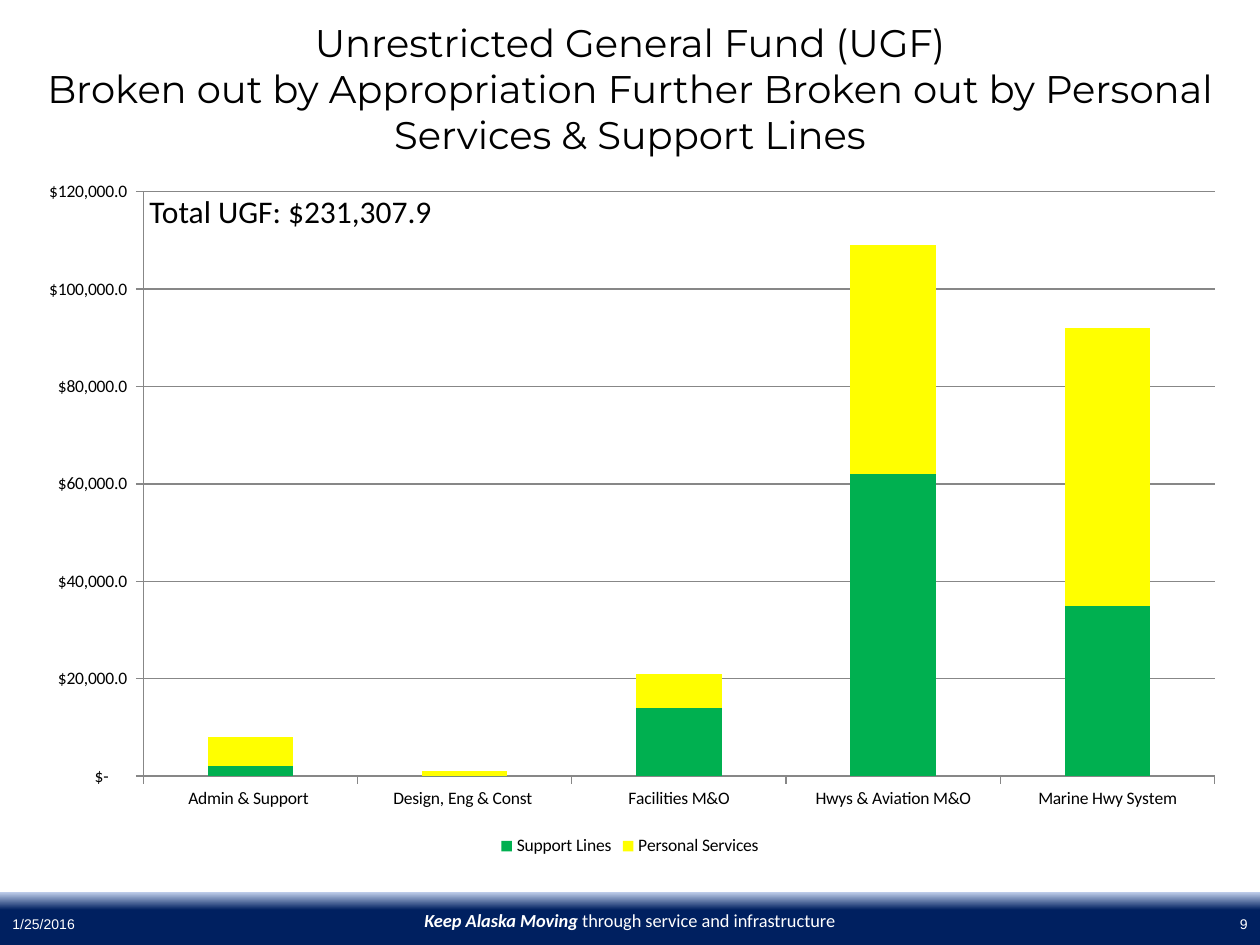
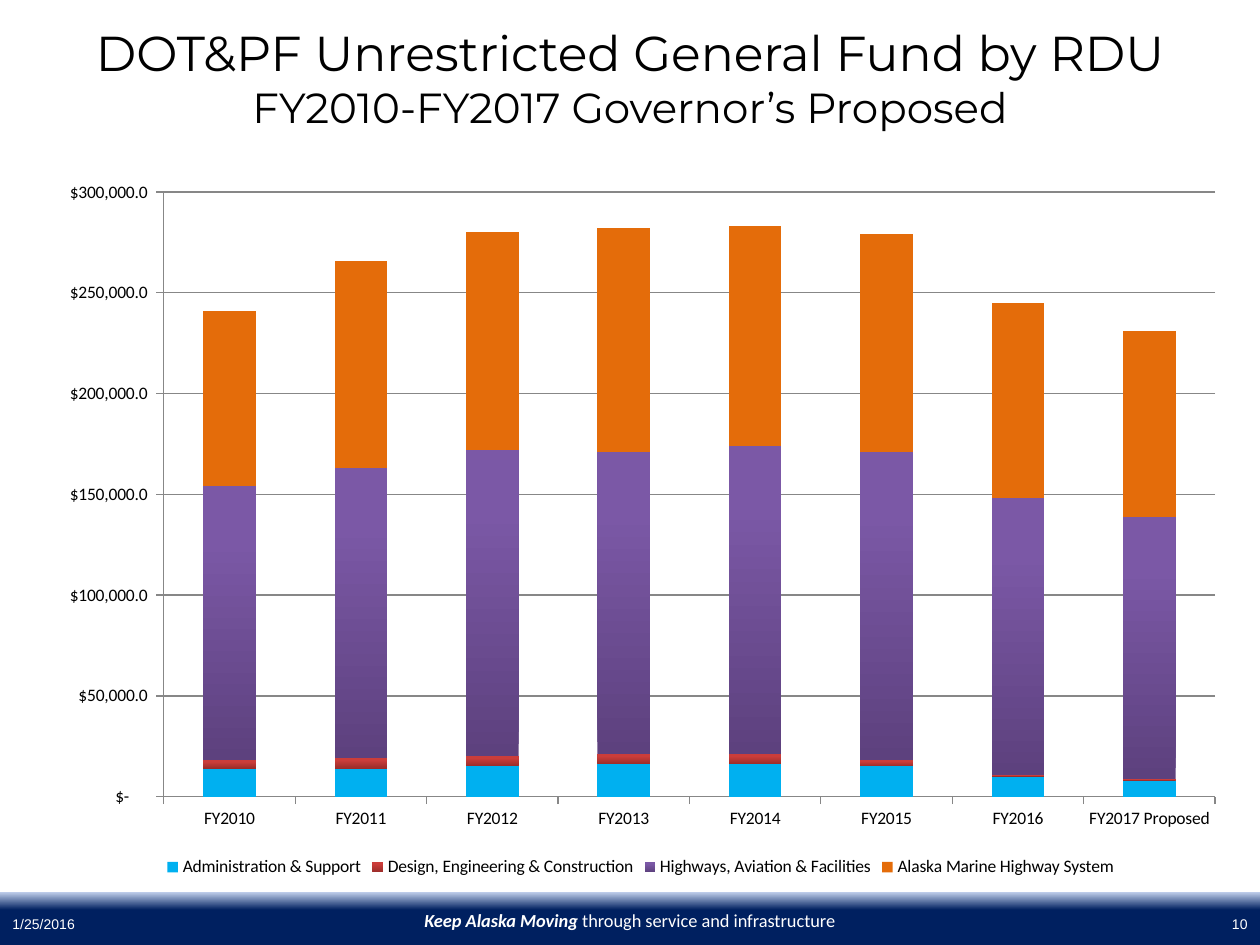
from pptx import Presentation
from pptx.chart.data import CategoryChartData
from pptx.dml.color import RGBColor
from pptx.enum.chart import XL_CHART_TYPE, XL_LEGEND_POSITION, XL_TICK_MARK
from pptx.enum.shapes import MSO_SHAPE
from pptx.enum.text import MSO_ANCHOR, MSO_AUTO_SIZE, PP_ALIGN
from pptx.util import Pt

PX = 914400 // 126  # EMU in one px
STACKED = XL_CHART_TYPE.COLUMN_STACKED
BOTTOM = XL_LEGEND_POSITION.BOTTOM
OUTSIDE = XL_TICK_MARK.OUTSIDE
RECT = MSO_SHAPE.RECTANGLE
TOP, MIDDLE = MSO_ANCHOR.TOP, MSO_ANCHOR.MIDDLE
NO_FIT = MSO_AUTO_SIZE.NONE
LEFT, CENTER, RIGHT = PP_ALIGN.LEFT, PP_ALIGN.CENTER, PP_ALIGN.RIGHT

BLACK, WHITE, GRID = "000000", "FFFFFF", "878787"
BAND_LIGHT, BAND_DARK = "C2D1ED", "002060"
TITLE_FONT, BODY_FONT, SMALL_FONT = "Montserrat", "Calibri", "Arial"
DOLLARS = '_("$"* #,##0.0_);_("$"* \\(#,##0.0\\);_("$"* "-"??_);_(@_)'


def rgb(value):
    return RGBColor.from_string(value)


def write(sp, text, size, font=BODY_FONT, color=BLACK, bold=False, italic=False,
          align=LEFT, anchor=TOP):
    """Append text to the shape's first paragraph; a newline is a line break."""
    tf = sp.text_frame
    tf.word_wrap, tf.auto_size, tf.vertical_anchor = True, NO_FIT, anchor
    p = tf.paragraphs[0]
    p.alignment = align
    for i, line in enumerate(text.split("\n")):
        if i:
            p.add_line_break()
        if line:
            r = p.add_run()
            r.text = line
            r.font.size, r.font.name = Pt(size), font
            r.font.bold, r.font.italic = bold, italic
            r.font.color.rgb = rgb(color)


# Content: a series has one colour, or two for a bottom-to-top gradient
slides = [
    dict(
        number="9",
        title=[("Unrestricted General Fund (UGF)\nBroken out by Appropriation Further "
                "Broken out by Personal Services & Support Lines", 22)],
        title_height=176,
        chart_box=(21, 168, 1218, 693),
        axis_max=120000, axis_step=20000,
        categories=["Admin & Support ", "Design, Eng & Const ", "Facilities M&O",
                    "Hwys & Aviation M&O", "Marine Hwy System"],
        series=[
            ("Support Lines", [2000, 0, 14000, 62000, 35000], ["00B050"]),
            ("Personal Services", [6000, 1000, 7000, 47000, 57000], ["FFFF00"]),
        ],
        total="Total UGF: $231,307.9",
    ),
    dict(
        number="10",
        title=[("DOT&PF Unrestricted General Fund by RDU\n", 28),
               ("FY2010-FY2017 Governor’s Proposed", 24)],
        title_height=155,
        chart_box=(42, 168, 1197, 714),
        axis_max=300000, axis_step=50000,
        categories=[f"FY{year}" for year in range(2010, 2017)] + ["FY2017 Proposed"],
        series=[
            ("Administration & Support",
             [14000, 14000, 15000, 16000, 16000, 15000, 10000, 8000], ["00B0F0"]),
            ("Design, Engineering & Construction",
             [4000, 5000, 5000, 5000, 5000, 3000, 1000, 1000], ["9B2D2A", "CB3D3A"]),
            ("Highways, Aviation & Facilities",
             [136000, 144000, 152000, 150000, 153000, 153000, 137000, 130000],
             ["5D417E", "7B58A6"]),
            ("Alaska Marine Highway System",
             [87000, 103000, 108000, 111000, 109000, 108000, 97000, 92000], ["E46C0A"]),
        ],
        total=None,
    ),
]

prs = Presentation()
prs.slide_width, prs.slide_height = 1260 * PX, 945 * PX

for content in slides:
    s = prs.slides.add_slide(prs.slide_layouts[5])

    # Footer band
    band = s.shapes.add_shape(RECT, 0, 892 * PX, 1260 * PX, 53 * PX)
    band.shadow.inherit = False
    band.line.fill.background()
    band.fill.gradient()
    band.fill.gradient_angle = 270
    light, dark = band.fill.gradient_stops
    light.color.rgb, light.position = rgb(BAND_LIGHT), 0
    dark.color.rgb, dark.position = rgb(BAND_DARK), 0.34

    # Footer text
    slogan = s.shapes.add_textbox(294 * PX, 903 * PX, 672 * PX, 42 * PX)
    write(slogan, "Keep Alaska Moving ", 10.5, color=WHITE, bold=True, italic=True, align=CENTER)
    write(slogan, "through service and infrastructure", 10.5, color=WHITE, align=CENTER)
    for x, text, align in [(0, "1/25/2016", LEFT), (966, content["number"], RIGHT)]:
        sp = s.shapes.add_textbox(x * PX, 903 * PX, 294 * PX, 42 * PX)
        write(sp, text, 8, font=SMALL_FONT, color=WHITE, align=align, anchor=MIDDLE)

    # Title
    title = s.shapes.title
    title.left, title.top = 0, 0
    title.width, title.height = 1260 * PX, content["title_height"] * PX
    for text, size in content["title"]:
        write(title, text, size, font=TITLE_FONT, align=CENTER, anchor=MIDDLE)

    # Stacked column chart
    data = CategoryChartData(number_format=DOLLARS)
    data.categories = content["categories"]
    for name, values, _ in content["series"]:
        data.add_series(name, values)
    box = [v * PX for v in content["chart_box"]]
    chart = s.shapes.add_chart(STACKED, *box, data).chart
    chart.has_title = False
    chart.font.size, chart.font.name = Pt(10), BODY_FONT
    chart.font.color.rgb = rgb(BLACK)
    chart.has_legend = True
    chart.legend.position, chart.legend.include_in_layout = BOTTOM, False

    # Columns
    plot = chart.plots[0]
    plot.gap_width, plot.overlap, plot.vary_by_categories = 150, 100, False
    for series, (_, _, colors) in zip(plot.series, content["series"]):
        fill = series.format.fill
        if len(colors) == 1:
            fill.solid()
            fill.fore_color.rgb = rgb(colors[0])
        else:
            fill.gradient()
            fill.gradient_angle = 90
            for stop, color, position in zip(fill.gradient_stops, colors, (0, 0.8)):
                stop.color.rgb, stop.position = rgb(color), position

    # Axes and gridlines
    value_axis = chart.value_axis
    value_axis.minimum_scale, value_axis.maximum_scale = 0, content["axis_max"]
    value_axis.major_unit = content["axis_step"]
    value_axis.tick_labels.number_format = DOLLARS
    value_axis.tick_labels.number_format_is_linked = False
    value_axis.has_major_gridlines = True
    for axis in (chart.category_axis, value_axis):
        axis.major_tick_mark = OUTSIDE
    for part in (chart.category_axis, value_axis, value_axis.major_gridlines):
        part.format.line.color.rgb = rgb(GRID)
        part.format.line.width = Pt(0.75)

    # Total over the plot
    if content["total"]:
        sp = s.shapes.add_textbox(137 * PX, 186 * PX, 347 * PX, 50 * PX)
        write(sp, content["total"], 18)

prs.save("out.pptx")
